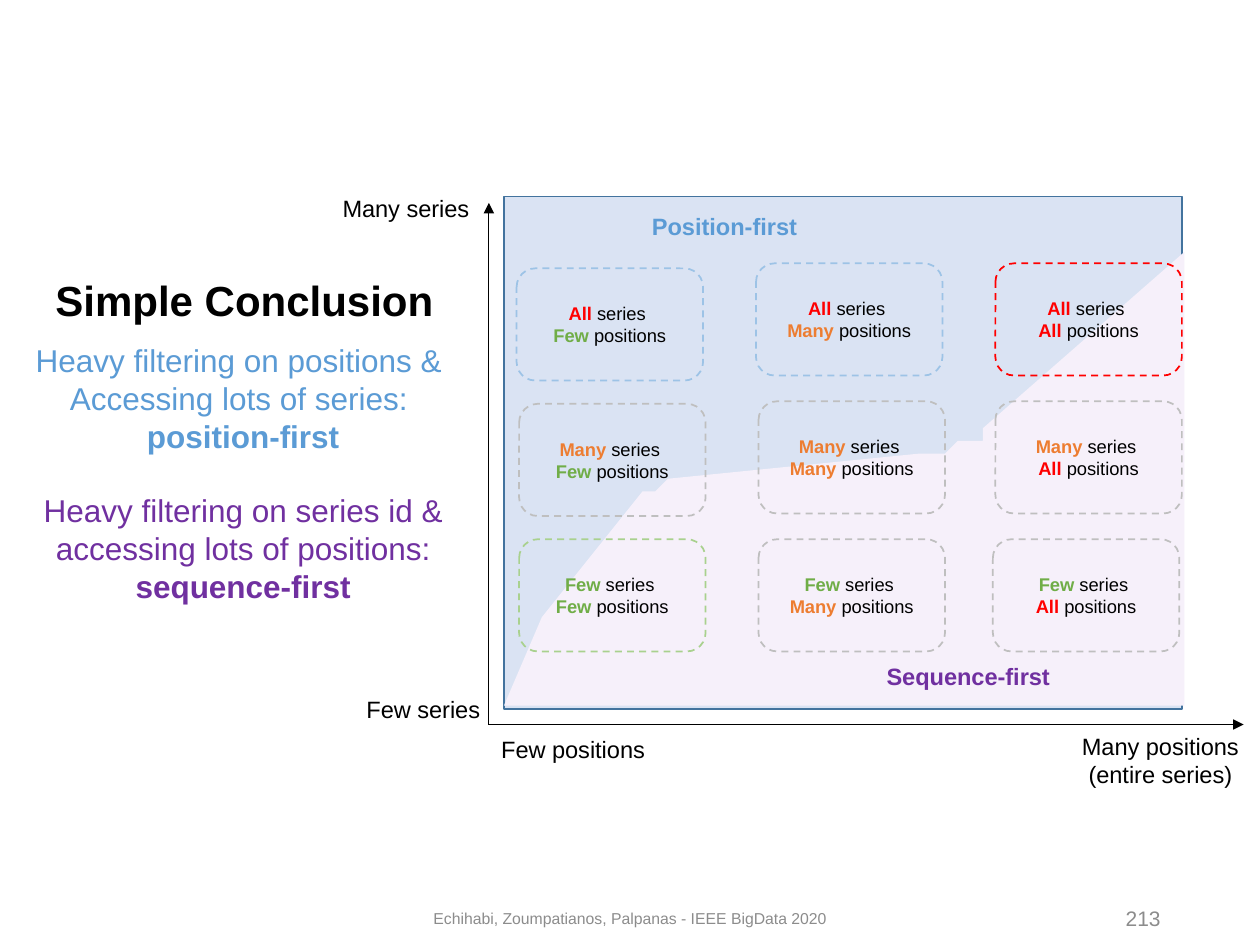
from dataclasses import dataclass
from typing import NamedTuple

from lxml import etree
from pptx import Presentation
from pptx.dml.color import RGBColor
from pptx.enum.dml import MSO_LINE
from pptx.enum.shapes import MSO_CONNECTOR, MSO_SHAPE
from pptx.enum.text import MSO_ANCHOR, MSO_AUTO_SIZE, PP_ALIGN
from pptx.oxml.ns import qn
from pptx.util import Inches, Pt

RECTANGLE, ROUNDED = MSO_SHAPE.RECTANGLE, MSO_SHAPE.ROUNDED_RECTANGLE
LEFT, CENTER, RIGHT = PP_ALIGN.LEFT, PP_ALIGN.CENTER, PP_ALIGN.RIGHT
TOP, MIDDLE = MSO_ANCHOR.TOP, MSO_ANCHOR.MIDDLE

# The slide is a grid of 100 columns by 75 rows
COLUMNS, ROWS = 100, 75
MODULE = Inches(0.1)


@dataclass(frozen=True)
class Theme:
    font: str = "Arial"
    black: str = "000000"
    white: str = "FFFFFF"
    grey: str = "8C8C8C"
    position: str = "5B9BD5"
    sequence: str = "7030A0"
    position_area: str = "DAE3F3"
    sequence_area: str = "F6F0FA"
    area_border: str = "43739E"
    all_red: str = "FF0000"
    many_orange: str = "ED7D31"
    few_green: str = "70AD47"
    tile_blue: str = "9DC3E6"
    tile_grey: str = "BFBFBF"
    tile_green: str = "A9D18E"
    heading_size: float = 24
    body_size: float = 18
    label_size: float = 13.5
    number_size: float = 12
    tile_size: float = 10.5
    footer_size: float = 9


THEME = Theme()
AMOUNT_COLORS = {"All": THEME.all_red, "Many": THEME.many_orange, "Few": THEME.few_green}


class Box(NamedTuple):
    """Place and size in grid columns and rows."""
    left: float
    top: float
    width: float
    height: float


class Run(NamedTuple):
    text: str
    color: str = THEME.black
    bold: bool = False


class Tile(NamedTuple):
    """One combination; the nudges shift it off its grid cell."""
    column: int
    row: int
    series: str
    positions: str
    border: str = THEME.tile_grey
    nudge_x: float = 0
    nudge_y: float = 0


class Label(NamedTuple):
    lines: tuple[str, ...]
    box: Box
    align: PP_ALIGN = LEFT


def grid(*values: float) -> list[int]:
    return [round(value * MODULE) for value in values]


def write(shape, lines: list[list[Run]], size: float, align=CENTER, anchor=MIDDLE, wrap=True):
    text_frame = shape.text_frame
    text_frame.word_wrap = wrap
    text_frame.vertical_anchor = anchor
    for index, runs in enumerate(lines):
        paragraph = text_frame.add_paragraph() if index else text_frame.paragraphs[0]
        paragraph.alignment = align
        for item in runs:
            run = paragraph.add_run()
            run.text = item.text
            run.font.name, run.font.size, run.font.bold = THEME.font, Pt(size), item.bold
            run.font.color.rgb = RGBColor.from_string(item.color)
    return text_frame


def paint(shape, fill: str | None = None, border: str | None = None, dashed: bool = False):
    shape.shadow.inherit = False
    if fill:
        shape.fill.solid()
        shape.fill.fore_color.rgb = RGBColor.from_string(fill)
    else:
        shape.fill.background()
    if border:
        shape.line.color.rgb = RGBColor.from_string(border)
        shape.line.width = Pt(1)
        if dashed:
            shape.line.dash_style = MSO_LINE.DASH
    else:
        shape.line.fill.background()
    return shape


def add_panel(slide, kind, box: Box, **style):
    return paint(slide.shapes.add_shape(kind, *grid(*box)), **style)


def add_text(slide, box: Box, lines: list[list[Run]], size: float, **layout):
    return write(slide.shapes.add_textbox(*grid(*box)), lines, size, **layout)


def add_axis(slide, start: tuple[float, float], end: tuple[float, float]) -> None:
    axis = slide.shapes.add_connector(MSO_CONNECTOR.STRAIGHT, *grid(*start, *end))
    axis.line.color.rgb = RGBColor.from_string(THEME.black)
    axis.line.width = Pt(0.5)
    etree.SubElement(axis.line._get_or_add_ln(), qn("a:tailEnd"), type="triangle")
    etree.SubElement(axis._element.spPr, qn("a:effectLst"))


def add_tile(slide, tile: Tile) -> None:
    box = Box(41 + 19 * tile.column + tile.nudge_x, 20.9 + 10.95 * tile.row + tile.nudge_y, 14.8, 8.9)
    shape = add_panel(slide, ROUNDED, box, border=tile.border, dashed=True)
    pairs = ((tile.series, "series "), (tile.positions, "positions"))
    write(shape, [[Run(f"{amount} ", AMOUNT_COLORS[amount], True), Run(noun)]
                  for amount, noun in pairs], THEME.tile_size)


def add_pill(slide, box: Box, text: str, color: str) -> None:
    shape = add_panel(slide, ROUNDED, box)
    shape.adjustments[0] = 0.5
    write(shape, [[Run(text, color, True)]], THEME.label_size)


def add_label(slide, label: Label) -> None:
    text_frame = add_text(slide, label.box, [[Run(line)] for line in label.lines],
                          THEME.label_size, align=label.align, anchor=TOP, wrap=False)
    text_frame.auto_size = MSO_AUTO_SIZE.SHAPE_TO_FIT_TEXT


ORIGIN = (38.8, 57.5)
BOUNDARY = [(93.9, 20), (78.4, 34.4), (77.6, 34.8), (76.7, 34.9), (75.8, 35.2), (75, 35.5),
            (73.6, 35.7), (72.8, 35.8), (53.4, 38.2), (52.6, 38.5), (51.8, 38.9), (51.4, 39.3),
            (42.6, 49.1), (40.1, 56.1), (93.5, 56.1)]
LABELS = [
    Label(("Many positions", "(entire series)"), Box(84.8, 57.6, 14.6, 5.6), CENTER),
    Label(("Many series",), Box(26.2, 14.9, 12.2, 3.3)),
    Label(("Few series",), Box(28.1, 54.7, 11.2, 3.3)),
    Label(("Few positions",), Box(38.8, 57.8, 13.6, 3.3)),
]
TILES = [
    Tile(0, 0, "All", "Few", THEME.tile_blue, nudge_y=0.4),
    Tile(1, 0, "All", "Many", THEME.tile_blue),
    Tile(2, 0, "All", "All", THEME.all_red),
    Tile(0, 1, "Many", "Few", nudge_x=0.2, nudge_y=0.2),
    Tile(1, 1, "Many", "Many", nudge_x=0.2),
    Tile(2, 1, "Many", "All"),
    Tile(0, 2, "Few", "Few", THEME.tile_green, nudge_x=0.2),
    Tile(1, 2, "Few", "Many", nudge_x=0.2),
    Tile(2, 2, "Few", "All", nudge_x=-0.2),
]
CONCLUSION = [
    [Run("Heavy filtering on positions & ", THEME.position)],
    [Run("Accessing lots of series: ", THEME.position)],
    [Run("position-first", THEME.position, True)],
    [Run("Heavy filtering on series id & accessing lots of positions: ", THEME.sequence),
     Run("sequence-first", THEME.sequence, True)],
]


def main() -> None:
    presentation = Presentation()
    presentation.slide_width, presentation.slide_height = grid(COLUMNS, ROWS)
    slide = presentation.slides.add_slide(presentation.slide_layouts[6])

    # Areas of the two strategies
    add_panel(slide, RECTANGLE, Box(40, 15.6, 53.8, 40.7),
              fill=THEME.position_area, border=THEME.area_border)
    builder = slide.shapes.build_freeform(*BOUNDARY[0], scale=MODULE)
    builder.add_line_segments(BOUNDARY[1:], close=True)
    paint(builder.convert_to_shape(), fill=THEME.sequence_area)

    # Axes and their labels
    add_axis(slide, ORIGIN, (98.7, 57.5))
    add_axis(slide, ORIGIN, (38.8, 16.1))
    for label in LABELS:
        add_label(slide, label)

    # Strategy names and combinations
    add_pill(slide, Box(48.4, 15.3, 18.2, 5.3), "Position-first", THEME.position)
    add_pill(slide, Box(66.5, 51.5, 20.7, 4.3), "Sequence-first", THEME.sequence)
    for tile in TILES:
        add_tile(slide, tile)

    # Conclusion, starting one line below the top of its panel
    panel = add_panel(slide, RECTANGLE, Box(0.7, 23.7, 37.2, 28.3), fill=THEME.white)
    text_frame = write(panel, CONCLUSION, THEME.body_size, anchor=TOP)
    text_frame.margin_top = Inches(0.34)
    text_frame.paragraphs[-1].space_before = Pt(20.7)
    heading = add_text(slide, Box(-1.7, 18.6, 42.2, 10.9),
                       [[Run("Simple Conclusion", bold=True)]], THEME.heading_size)
    heading.paragraphs[0].line_spacing = 0.9

    # Footer
    add_text(slide, Box(33.1, 70.9, 33.8, 4),
             [[Run("Echihabi, Zoumpatianos, Palpanas - IEEE BigData 2020", THEME.grey)]],
             THEME.footer_size)
    add_text(slide, Box(70.6, 70.9, 22.5, 4), [[Run("213", THEME.grey)]],
             THEME.number_size, align=RIGHT)

    presentation.save("out.pptx")


if __name__ == "__main__":
    main()
